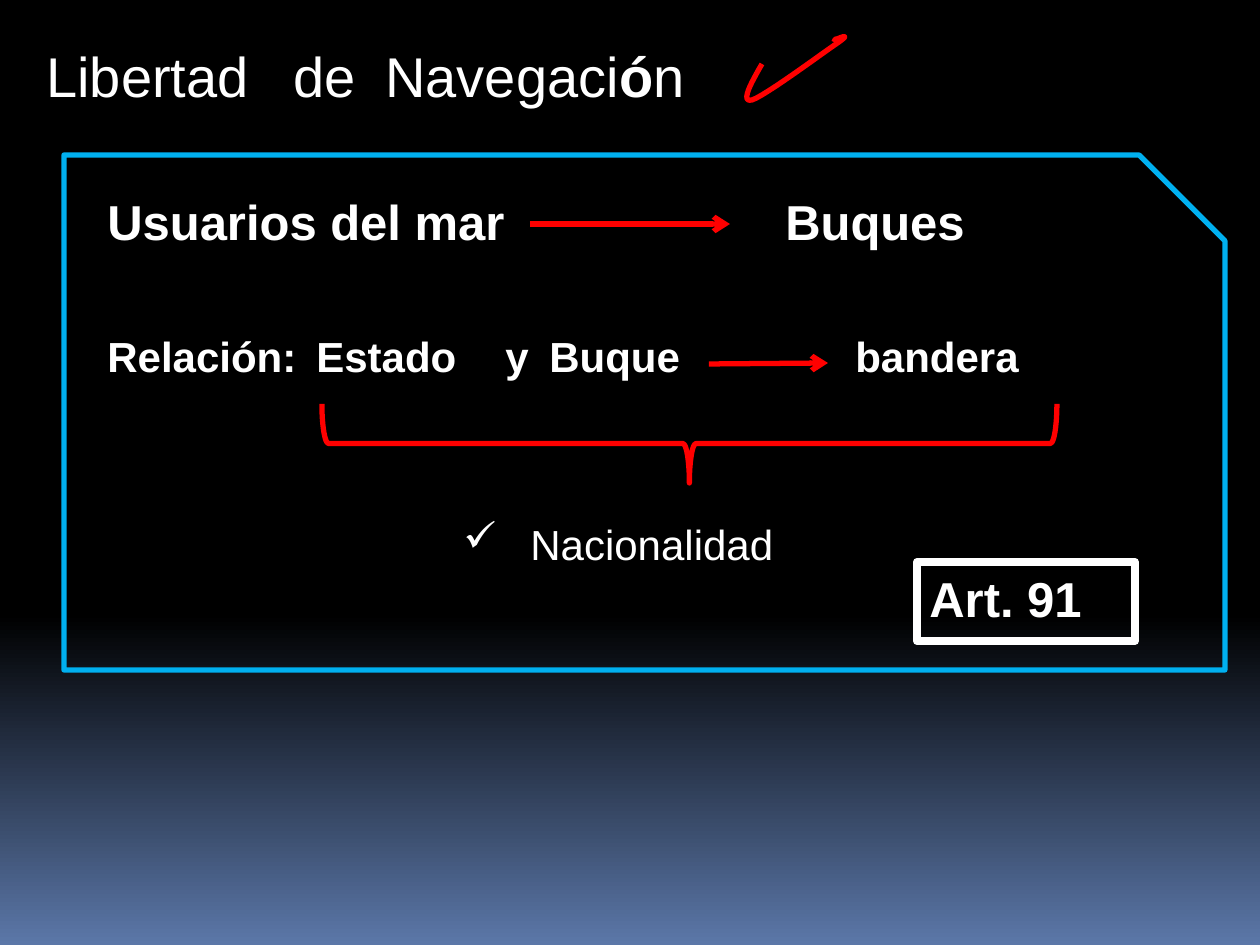
import pptx
import copy
import pptx.util
import pptx.dml.color
import pptx.enum.shapes
import pptx.enum.text
import pptx.oxml
import pptx.oxml.ns

PX = 914400 // 126
RGB = pptx.dml.color.RGBColor.from_string
SHAPES = pptx.enum.shapes.MSO_SHAPE
qn = pptx.oxml.ns.qn

THEME = {
    "font": "Arial",
    "text": RGB("FFFFFF"), "mark": RGB("FF0000"), "frame": RGB("00B0F0"),
    "night": RGB("000000"), "horizon": RGB("5B77A8"),
    "title": 32, "heading": 28, "body": 24,
    "thin": 3, "thick": 4.5,
}


def write(shape, runs, size, tabs=()):
    """Fill a shape with one paragraph of (text, bold) runs and tab stops in px."""
    frame_format = {
        "word_wrap": True,
        "auto_size": pptx.enum.text.MSO_AUTO_SIZE.SHAPE_TO_FIT_TEXT,
        "vertical_anchor": pptx.enum.text.MSO_ANCHOR.TOP,
    }
    for name, value in frame_format.items():
        setattr(shape.text_frame, name, value)
    paragraph = shape.text_frame.paragraphs[0]
    paragraph.alignment = pptx.enum.text.PP_ALIGN.LEFT
    for text, bold in runs:
        run = paragraph.add_run()
        run.text = text
        font_format = {"name": THEME["font"], "size": pptx.util.Pt(THEME[size]), "bold": bold}
        for name, value in font_format.items():
            setattr(run.font, name, value)
        run.font.color.rgb = THEME["text"]
    properties = paragraph._p.get_or_add_pPr()
    if tabs:
        tab_list = pptx.oxml.ns.qn("a:tabLst")
        tab_list = properties.makeelement(tab_list, {})
        properties.append(tab_list)
        for tab in tabs:
            stop = tab_list.makeelement(qn("a:tab"), {"pos": str(tab * PX), "algn": "l"})
            tab_list.append(stop)
    return properties


def outline(shape, color, width):
    """Leave a shape unfilled and without shadow, and draw its line."""
    shape.shadow.inherit = False
    shape.fill.background()
    shape.line.color.rgb = THEME[color]
    shape.line.width = pptx.util.Pt(THEME[width])


presentation = pptx.Presentation()
presentation.slide_width = 1260 * PX
presentation.slide_height = 945 * PX
slide = presentation.slides.add_slide(presentation.slide_layouts[6])
shapes = slide.shapes

# Background: black down to 65 %, then fading to blue
fill = slide.background.fill
fill.gradient()
fill.gradient_angle = 270
first_stop = next(slide.element.iter(qn("a:gs")))
first_stop.addnext(copy.deepcopy(first_stop))
stops = [(0, "night"), (0.65, "night"), (1, "horizon")]
for stop, (position, color) in zip(fill.gradient_stops, stops):
    stop.position = position
    stop.color.rgb = THEME[color]

# Title and the two lines, with tab stops holding the gaps
text_lines = [
    ((34, 35, 834, 81), [("Libertad\tde\tNavegaci", False), ("ó", True), ("n", False)],
     "title", (247, 339)),
    ((95, 185, 922, 72), [("Usuarios del mar\tBuques", True)], "heading", (678,)),
    ((95, 324, 983, 63), [("Relación:\tEstado\ty\tBuque\tbandera", True)],
     "body", (209, 398, 442, 748)),
]
for box, runs, size, tabs in text_lines:
    write(shapes.add_textbox(*(length * PX for length in box)), runs, size, tabs)

# Arrows
for ends in [(530, 224, 730, 224), (709, 364, 828, 363)]:
    arrow = shapes.add_connector(
        pptx.enum.shapes.MSO_CONNECTOR.STRAIGHT, *(length * PX for length in ends))
    arrow.line.color.rgb = THEME["mark"]
    arrow.line.width = pptx.util.Pt(THEME["thin"])
    line = arrow.line._get_or_add_ln()
    line.append(line.makeelement(qn("a:tailEnd"), {"type": "arrow"}))
    line.addnext(line.makeelement(qn("a:effectLst"), {}))

# Brace under the state and its flag
brace = shapes.add_shape(SHAPES.LEFT_BRACE, 650 * PX, 76 * PX, 79 * PX, 735 * PX)
brace.rotation = 270
outline(brace, "mark", "thin")

# Nationality, with a check mark as bullet
nationality = shapes.add_textbox(451 * PX, 512 * PX, 466 * PX, 64 * PX)
properties = write(nationality, [("Nacionalidad", False)], "body")
properties.set("marL", str(67 * PX))
properties.set("indent", str(-67 * PX))
properties.append(properties.makeelement(qn("a:buChar"), {"char": "✓"}))

# Article label
article = shapes.add_shape(SHAPES.RECTANGLE, 917 * PX, 562 * PX, 218 * PX, 79 * PX)
outline(article, "text", "thick")
write(article, [("Art. 91", True)], "heading")

# Frame with a snipped corner
frame = shapes.add_shape(SHAPES.SNIP_1_RECTANGLE, 64 * PX, 155 * PX, 1161 * PX, 515 * PX)
outline(frame, "frame", "thin")

# Hand-drawn check mark: Bézier curves sampled into short segments
start = (762, 64)
curves = [
    [(751, 83), (740, 103), (752, 100)],
    [(765, 96), (824, 52), (839, 42)],
    [(853, 32), (837, 39), (837, 39)],
    [(835, 39), (835, 40), (834, 42)],
]
STEPS = 12
points = []
knot = start
for controls in curves:
    for step in range(1, STEPS + 1):
        t = step / STEPS
        weights = ((1 - t) ** 3, 3 * t * (1 - t) ** 2, 3 * t ** 2 * (1 - t), t ** 3)
        corners = [knot, *controls]
        points.append(tuple(
            round(PX * sum(w * corner[axis] for w, corner in zip(weights, corners)))
            for axis in (0, 1)))
    knot = controls[-1]
builder = shapes.build_freeform(start[0] * PX, start[1] * PX)
builder.add_line_segments(points, close=False)
outline(builder.convert_to_shape(), "mark", "thin")

presentation.save("out.pptx")
